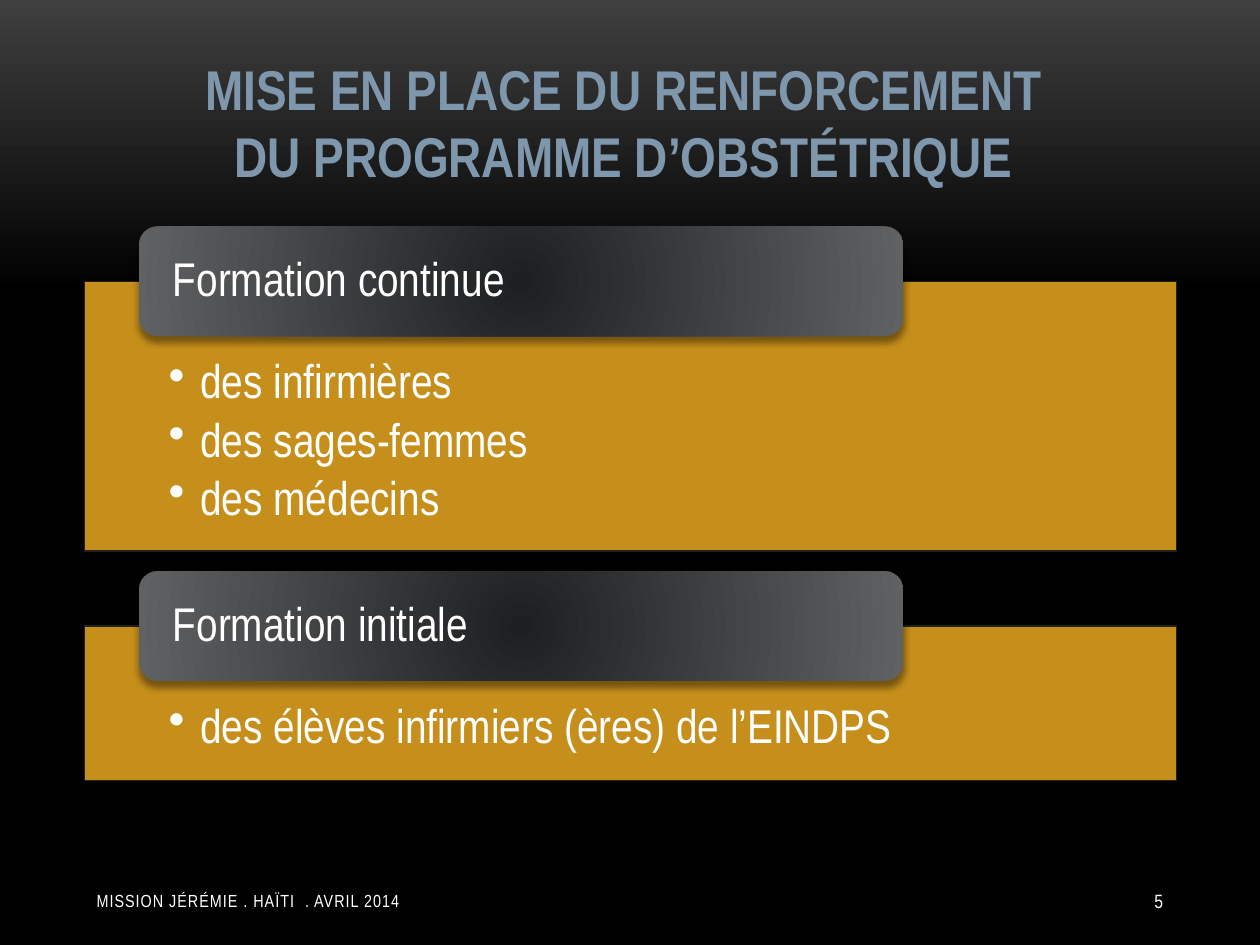
from dataclasses import dataclass

import lxml.etree
import pptx
import pptx.dml.color
import pptx.enum.shapes
import pptx.enum.text
import pptx.oxml.ns
import pptx.util

Cm = pptx.util.Cm
Pt = pptx.util.Pt
Align = pptx.enum.text.PP_ALIGN
Anchor = pptx.enum.text.MSO_ANCHOR
Shape = pptx.enum.shapes.MSO_SHAPE
qn = pptx.oxml.ns.qn


@dataclass(frozen=True)
class Theme:
    font: str = "Arial Narrow"
    heading: str = "7E97AD"
    text: str = "FFFFFF"
    panel: str = "DC9E1F"
    outline: str = "1F2123"
    shadow: str = "000000"
    backdrop: tuple = ((0, "3F3F3F"), (31, "000000"), (100, "000000"))
    tab: tuple = ((0, "1D1F21"), (100, "606162"))
    title_size: int = 32
    body_size: int = 27
    footer_size: int = 10
    number_size: int = 11


def rgb(value):
    return pptx.dml.color.RGBColor.from_string(value)


def add_xml(parent, tag, **attributes):
    return lxml.etree.SubElement(
        parent, qn(tag), {key: str(value) for key, value in attributes.items()})


def set_stops(grad_fill, stops):
    """Empty the gradient and give it new colour stops, without a direction."""
    for child in list(grad_fill):
        grad_fill.remove(child)
    stop_list = add_xml(grad_fill, "a:gsLst")
    for position, color in stops:
        stop = add_xml(stop_list, "a:gs", pos=position * 1000)
        add_xml(stop, "a:srgbClr", val=color)


class SlideBuilder:
    LEFT, WIDTH = 1.7, 22.02
    TAB_OFFSET, TAB_HEIGHT = 1.1, 2.21

    def __init__(self, slide, theme):
        self.slide = slide
        self.theme = theme

    def background(self):
        self.slide.background.fill.gradient()
        grad_fill = self.slide.element.find(".//" + qn("a:gradFill"))
        set_stops(grad_fill, self.theme.backdrop)
        add_xml(grad_fill, "a:lin", ang=90 * 60000, scaled=0)

    def format_text(self, paragraph, size, color=None, bold=False):
        for run in paragraph.runs:
            run.font.name = self.theme.font
            run.font.size = Pt(size)
            run.font.bold = bold
            run.font.color.rgb = rgb(color or self.theme.text)

    def text(self, content, box, size, color=None, bold=False,
             align=Align.LEFT, anchor=Anchor.MIDDLE, tracking=0):
        frame = self.slide.shapes.add_textbox(*map(Cm, box)).text_frame
        frame.word_wrap = True
        frame.vertical_anchor = anchor
        frame.text = content
        paragraph = frame.paragraphs[0]
        paragraph.alignment = align
        self.format_text(paragraph, size, color, bold)
        if tracking:
            for run in paragraph.runs:
                run.font._element.set("spc", str(round(tracking * 100)))

    def block(self, kind, box, margins, anchor):
        """Add a shape whose text frame has the given margins."""
        shape = self.slide.shapes.add_shape(kind, *map(Cm, box))
        shape.shadow.inherit = False
        frame = shape.text_frame
        frame.word_wrap = True
        frame.vertical_anchor = anchor
        (frame.margin_left, frame.margin_top,
         frame.margin_right, frame.margin_bottom) = map(Cm, margins)
        return shape

    def panel(self, top, height, items):
        panel = self.block(Shape.RECTANGLE, (self.LEFT, top, self.WIDTH, height),
                           (1.7, 1.55, 1.7, 0.53), Anchor.TOP)
        panel.fill.solid()
        panel.fill.fore_color.rgb = rgb(self.theme.panel)
        color = panel._element.spPr.find(qn("a:solidFill"))[0]
        add_xml(color, "a:alpha", val=90000)
        panel.line.color.rgb = rgb(self.theme.outline)
        panel.line.width = Pt(0.75)
        panel.text_frame.text = "\n".join(items)
        for paragraph in panel.text_frame.paragraphs:
            paragraph.alignment = Align.LEFT
            paragraph.line_spacing = 0.9
            paragraph.space_after = Pt(4)
            properties = paragraph._p.get_or_add_pPr()
            properties.set("marL", str(Cm(0.64)))
            properties.set("indent", str(-Cm(0.64)))
            add_xml(properties, "a:buChar", char="•")
            self.format_text(paragraph, self.theme.body_size)

    def tab(self, panel_top, label):
        """Add the heading that straddles the top edge of a panel."""
        box = (self.LEFT + self.TAB_OFFSET, panel_top - self.TAB_HEIGHT / 2,
               self.WIDTH * 0.7, self.TAB_HEIGHT)
        tab = self.block(Shape.ROUNDED_RECTANGLE, box, (0.58, 0, 0.58, 0),
                         Anchor.MIDDLE)
        tab.line.fill.background()
        tab.fill.gradient()
        properties = tab._element.spPr
        grad_fill = properties.find(qn("a:gradFill"))
        set_stops(grad_fill, self.theme.tab)
        center = add_xml(grad_fill, "a:path", path="circle")
        add_xml(center, "a:fillToRect", l=50000, t=50000, r=50000, b=50000)
        shadow = add_xml(properties.find(qn("a:effectLst")), "a:outerShdw",
                         blurRad=Pt(4), dist=Pt(3.4), dir=90 * 60000,
                         rotWithShape=0)
        color = add_xml(shadow, "a:srgbClr", val=self.theme.shadow)
        add_xml(color, "a:alpha", val=40000)
        tab.text_frame.text = label
        paragraph = tab.text_frame.paragraphs[0]
        paragraph.alignment = Align.LEFT
        paragraph.line_spacing = 0.9
        self.format_text(paragraph, self.theme.body_size)


def main():
    presentation = pptx.Presentation()
    presentation.slide_width, presentation.slide_height = Cm(25.4), Cm(19.05)
    slide = presentation.slides.add_slide(presentation.slide_layouts[6])
    theme = Theme()
    builder = SlideBuilder(slide, theme)

    builder.background()
    builder.text("MISE EN PLACE DU RENFORCEMENT \vDU PROGRAMME D’OBSTÉTRIQUE ",
                 (builder.LEFT, 0.76, builder.WIDTH, 3.18), theme.title_size,
                 theme.heading, True, Align.CENTER, Anchor.BOTTOM)

    trainings = [
        ("Formation continue", 5.44,
         ["des infirmières", "des sages-femmes", "des médecins"]),
        ("Formation initiale", 3.12,
         ["des élèves infirmiers (ères) de l’EINDPS"]),
    ]
    top, gap = 5.67, 1.51
    for label, height, audience in trainings:
        builder.panel(top, height, audience)
        builder.tab(top, label)
        top += height + gap

    builder.text("MISSION JÉRÉMIE . HAÏTI  . AVRIL 2014",
                 (builder.LEFT, 17.65, 8.05, 1.02), theme.footer_size,
                 tracking=0.6)
    builder.text("5", (20.96, 17.65, 2.74, 1.02), theme.number_size,
                 align=Align.RIGHT)
    presentation.save("out.pptx")


if __name__ == "__main__":
    main()
